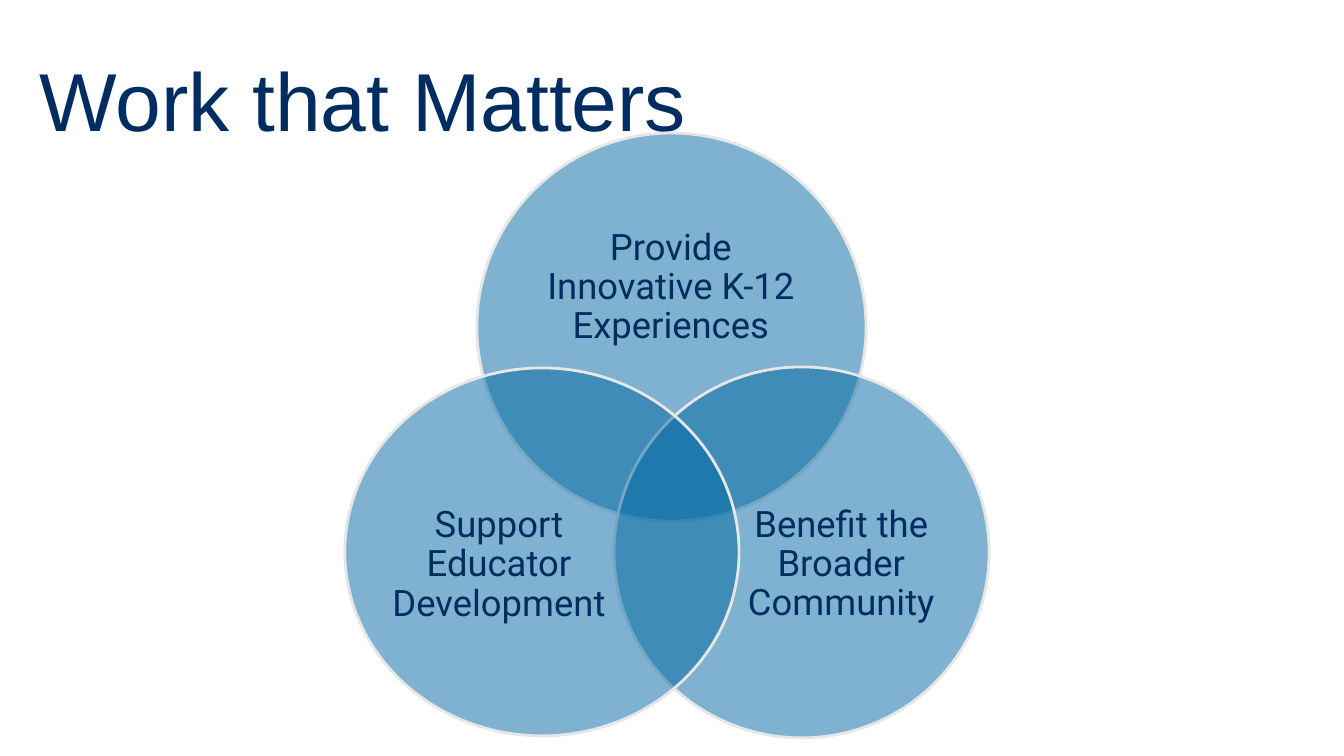
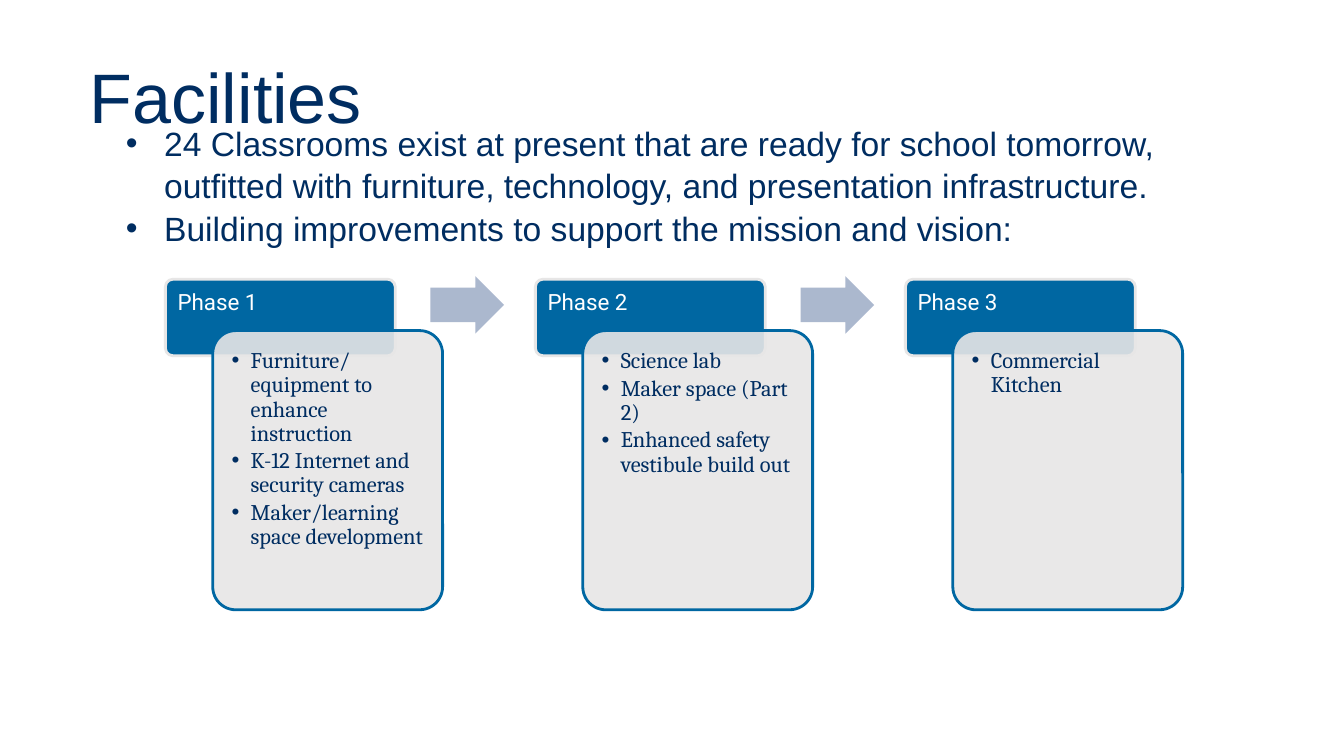
"""Build two slides: a three-circle Venn diagram and a three-phase facilities plan."""
import lxml.etree
import pptx
import pptx.dml.color
import pptx.enum.shapes
import pptx.enum.text
import pptx.oxml.ns
import pptx.util

Inches, Pt = pptx.util.Inches, pptx.util.Pt
RGBColor = pptx.dml.color.RGBColor
Shape = pptx.enum.shapes.MSO_SHAPE
Align, Anchor = pptx.enum.text.PP_ALIGN, pptx.enum.text.MSO_ANCHOR
qn = pptx.oxml.ns.qn

NAVY = RGBColor(0x00, 0x2D, 0x61)
BLUE = RGBColor(0x00, 0x67, 0xA2)
PALE = RGBColor(0xE7, 0xE6, 0xE6)
ARROW = RGBColor(0xAB, 0xB8, 0xCE)
WHITE = RGBColor(0xFF, 0xFF, 0xFF)


def add_figure(page, kind, area, fill, line=None, opacity=100):
    figure = page.shapes.add_shape(kind, *map(Inches, area))
    figure.shadow.inherit = False
    figure.fill.solid()
    figure.fill.fore_color.rgb = fill
    if opacity < 100:
        color = figure.fill._xPr.find(qn("a:solidFill"))[0]
        lxml.etree.SubElement(color, qn("a:alpha"), val=str(opacity * 1000))
    if line is None:
        figure.line.fill.background()
    else:
        figure.line.color.rgb = line
        figure.line.width = Pt(2)
    return figure


def write(box, lines, font, size, color, margins, anchor=Anchor.TOP, align=Align.LEFT,
          spacing=1, after=0, indent=0):
    frame = box.text_frame
    frame.word_wrap = True
    frame.auto_size = pptx.enum.text.MSO_AUTO_SIZE.NONE
    frame.vertical_anchor = anchor
    frame.margin_left, frame.margin_top, frame.margin_right, frame.margin_bottom = map(Inches, margins)
    frame.text = "\n".join(lines)
    for para in frame.paragraphs:
        if indent:
            props = para._p.get_or_add_pPr()
            props.set("marL", str(Inches(indent)))
            props.set("indent", str(-Inches(indent)))
            lxml.etree.SubElement(props, qn("a:buFont"), typeface="Arial")
            lxml.etree.SubElement(props, qn("a:buChar"), char="•")
        para.alignment = align
        para.line_spacing = spacing
        para.space_after = Pt(after)
        para.font.name = font
        para.font.size = Pt(size)
        para.font.color.rgb = color


deck = pptx.Presentation()
deck.slide_width, deck.slide_height = Inches(13.33), Inches(7.5)

pages = []
for heading, left, top, size in [("Work that Matters", 0.29, 0.19, 58.7), ("Facilities", 0.79, 0.16, 50)]:
    page = deck.slides.add_slide(deck.slide_layouts[5])
    title = page.shapes.title
    title.left, title.top, title.width, title.height = map(Inches, (left, top, 11.5, 1.45))
    write(title, [heading], "Arial", size, NAVY, (0.1, 0.17, 0.1, 0.05), Anchor.MIDDLE)
    pages.append(page)
venn_page, phase_page = pages

circles = [
    ("Provide Innovative K-12 Experiences", (4.73, 1.32, 3.86, 3.85), (5.24, 1.99, 2.83, 1.73)),
    ("Benefit the Broader Community", (6.09, 3.64, 3.72, 3.68), (7.23, 4.59, 2.23, 2.02)),
    ("Support Educator Development", (3.42, 3.65, 3.91, 3.65), (3.78, 4.6, 2.34, 2.01)),
]
for label, circle_area, label_area in circles:
    add_figure(venn_page, Shape.OVAL, circle_area, BLUE, PALE, 50)
    box = venn_page.shapes.add_textbox(*map(Inches, label_area))
    write(box, [label], "Roboto", 26, NAVY, (0, 0, 0, 0), Anchor.MIDDLE, Align.CENTER, 0.9)

intro = phase_page.shapes.add_textbox(*map(Inches, (1.15, 1.15, 10.77, 1.31)))
write(intro, [
    "24 Classrooms exist at present that are ready for school tomorrow, outfitted with furniture, "
    "technology, and presentation infrastructure.",
    "Building improvements to support the mission and vision:",
], "Arial", 24, NAVY, (0.1, 0.05, 0.1, 0.05), spacing=1.05, indent=0.38)

phases = [
    ["Furniture/ equipment to enhance instruction", "K-12 Internet and security cameras",
     "Maker/learning space development"],
    ["Science lab", "Maker space (Part 2)", "Enhanced safety vestibule build out"],
    ["Commercial Kitchen"],
]
for index, items in enumerate(phases):
    left = 1.64 + 3.67 * index
    header = add_figure(phase_page, Shape.ROUNDED_RECTANGLE, (left, 2.77, 2.28, 0.76), BLUE, PALE)
    header.adjustments[0] = 0.1
    write(header, [f"Phase {index + 1}"], "Roboto", 16, WHITE, (0.1, 0.1, 0.1, 0.05), spacing=0.9)
    card = add_figure(phase_page, Shape.ROUNDED_RECTANGLE, (left + 0.47, 3.28, 2.28, 2.77), PALE, BLUE, 90)
    card.adjustments[0] = 0.1
    write(card, items, "Cambria", 16, NAVY, (0.12, 0.12, 0.12, 0.12), spacing=0.9, after=2.4, indent=0.19)
    if index < len(phases) - 1:
        arrow = add_figure(phase_page, Shape.RIGHT_ARROW, (left + 2.63, 2.74, 0.73, 0.57), ARROW)
        arrow.adjustments[0] = 0.6
        arrow.adjustments[1] = 0.5

deck.save("out.pptx")
